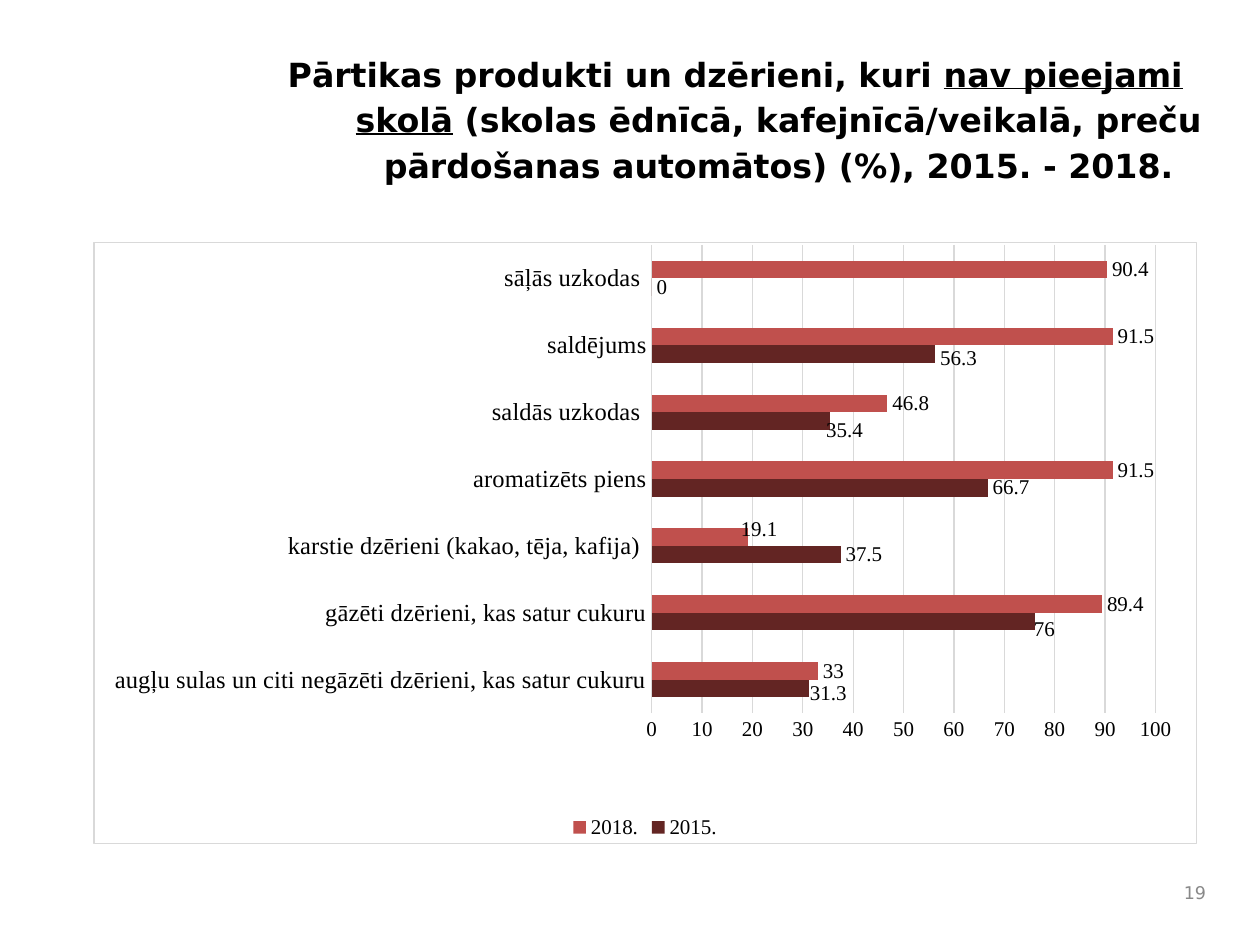
"""Build a slide with a clustered bar chart of foods not available at school."""
import lxml.etree
import pptx
import pptx.chart.data
import pptx.dml.color
import pptx.enum.chart
import pptx.enum.text
import pptx.oxml
import pptx.oxml.ns
import pptx.util
from pptx.util import Inches

HUES = {"ink": "000000", "grey": "898989", "rule": "D9D9D9",
        "2015.": "632523", "2018.": "C0504D"}
SANS, SERIF = "DejaVu Sans", "Times New Roman"
TITLE = [
    ("Pārtikas produkti un dzērieni, kuri ", False),
    ("nav pieejami skolā", True),
    (" (skolas ēdnīcā, kafejnīcā/veikalā, preču pārdošanas automātos) (%), 2015. - 2018.", False),
]
CATS = [
    "augļu sulas un citi negāzēti dzērieni, kas satur cukuru",
    "gāzēti dzērieni, kas satur cukuru",
    "karstie dzērieni (kakao, tēja, kafija) ",
    "aromatizēts piens",
    "saldās uzkodas ",
    "saldējums",
    "sāļās uzkodas ",
]
DATA = {
    "2015.": [31.3, 76, 37.5, 66.7, 35.4, 56.3, 0],
    "2018.": [33, 89.4, 19.1, 91.5, 46.8, 91.5, 90.4],
}
SHIFTS = {
    "2015.": {0: (-0.004, 0.008), 1: (-0.005, 0.013), 4: (-0.008, 0.016), 5: (0, 0.008)},
    "2018.": {2: (-0.011, -0.013)},
}


def rgb(name):
    """Return the named colour."""
    return pptx.dml.color.RGBColor.from_string(HUES[name])


def put(item, **vals):
    """Set attributes from format values."""
    for key, val in vals.items():
        setattr(item, key, val)


def style(font, size, name, hue="ink", **more):
    """Format a font."""
    put(font, size=pptx.util.Pt(size), name=name, **more)
    font.color.rgb = rgb(hue)


def rule(line):
    """Give a line the thin grey look."""
    line.color.rgb = rgb("rule")
    line.width = pptx.util.Pt(0.75)


def layout(x, y, **more):
    """Return a manual layout element."""
    vals = {**more, "x": x, "y": y}
    keys = ("layoutTarget", "xMode", "yMode", "x", "y", "w", "h")
    body = "".join(f'<c:{k} val="{vals[k]}"/>' for k in keys if k in vals)
    space = pptx.oxml.ns.nsdecls("c")
    return pptx.oxml.parse_xml(
        f"<c:layout {space}><c:manualLayout>{body}</c:manualLayout></c:layout>")


def add_title(slide):
    """Fill and place the title."""
    title = slide.shapes.title
    put(title, left=Inches(2), top=Inches(0.25), width=Inches(7.67), height=Inches(1.3))
    frame = title.text_frame
    put(frame, word_wrap=True, margin_top=Inches(0.13),
        auto_size=pptx.enum.text.MSO_AUTO_SIZE.NONE,
        vertical_anchor=pptx.enum.text.MSO_ANCHOR.TOP)
    para = frame.paragraphs[0]
    put(para, alignment=pptx.enum.text.PP_ALIGN.CENTER, line_spacing=1.15,
        space_before=pptx.util.Pt(0), space_after=pptx.util.Pt(6))
    props = para._p.get_or_add_pPr()
    props.set("marL", str(Inches(0.69)))
    props.set("indent", str(Inches(-0.69)))
    for text, under in TITLE:
        run = para.add_run()
        run.text = text
        style(run.font, 19, SANS, bold=True, underline=under)


def add_number(slide):
    """Add the page number."""
    box = slide.shapes.add_textbox(Inches(9.24), Inches(6.92), Inches(0.43), Inches(0.33))
    frame = box.text_frame
    put(frame, word_wrap=True, vertical_anchor=pptx.enum.text.MSO_ANCHOR.MIDDLE)
    para = frame.paragraphs[0]
    para.alignment = pptx.enum.text.PP_ALIGN.RIGHT
    run = para.add_run()
    run.text = "19"
    style(run.font, 10, SANS, "grey")


def set_axes(chart):
    """Format both axes."""
    for axis, size in ((chart.category_axis, 14), (chart.value_axis, 12)):
        put(axis, major_tick_mark=pptx.enum.chart.XL_TICK_MARK.NONE,
            minor_tick_mark=pptx.enum.chart.XL_TICK_MARK.NONE)
        style(axis.tick_labels.font, size, SERIF)
    rule(chart.category_axis.format.line)
    values = chart.value_axis
    put(values, minimum_scale=0, maximum_scale=100, major_unit=10, has_major_gridlines=True)
    values.format.line.fill.background()
    rule(values.major_gridlines.format.line)


def set_series(series):
    """Colour a series and place its labels."""
    outside = pptx.enum.chart.XL_LABEL_POSITION.OUTSIDE_END
    series.format.fill.solid()
    series.format.fill.fore_color.rgb = rgb(series.name)
    series.invert_if_negative = False
    labels = series.data_labels
    put(labels, show_value=True, position=outside)
    style(labels.font, 12, SERIF)
    for index, (x, y) in SHIFTS[series.name].items():
        label = series.points[index].data_label
        label.position = outside
        style(label.font, 12, SERIF)
        mark = series._element.xpath(f"c:dLbls/c:dLbl/c:idx[@val='{index}']")[0]
        mark.addnext(layout(x, y))


def frame_chart(chart):
    """Add the chart border and fix the plot area."""
    space = chart._chartSpace
    width = pptx.util.Pt(0.75)
    border = pptx.oxml.parse_xml(
        f'<c:spPr {pptx.oxml.ns.nsdecls("c", "a")}><a:noFill/><a:ln w="{width}"><a:solidFill>'
        f'<a:srgbClr val="{HUES["rule"]}"/></a:solidFill></a:ln></c:spPr>')
    space.xpath("c:txPr")[0].addprevious(border)
    area = space.xpath("c:chart/c:plotArea")[0]
    for old in area.xpath("c:layout"):
        area.remove(old)
    area.insert(0, layout(0.506, 0.004, layoutTarget="inner", xMode="edge",
                          yMode="edge", w=0.457, h=0.779))


def add_bars(slide):
    """Add the bar chart."""
    data = pptx.chart.data.CategoryChartData()
    data.categories = CATS
    for name, vals in DATA.items():
        data.add_series(name, vals)
    chart = slide.shapes.add_chart(
        pptx.enum.chart.XL_CHART_TYPE.BAR_CLUSTERED,
        Inches(0.74), Inches(1.92), Inches(8.76), Inches(4.78), data).chart
    put(chart, has_title=False, has_legend=True)
    style(chart.font, 12, SERIF)
    put(chart.legend, include_in_layout=False,
        position=pptx.enum.chart.XL_LEGEND_POSITION.BOTTOM)
    style(chart.legend.font, 12, SERIF)
    put(chart.plots[0], gap_width=182, overlap=0, vary_by_categories=False)
    set_axes(chart)
    for series in chart.plots[0].series:
        set_series(series)
    frame_chart(chart)


def main():
    """Build and save the slide."""
    deck = pptx.Presentation()
    put(deck, slide_width=Inches(10), slide_height=Inches(7.5))
    slide = deck.slides.add_slide(deck.slide_layouts[5])
    add_title(slide)
    add_bars(slide)
    add_number(slide)
    deck.save("out.pptx")


if __name__ == "__main__":
    main()
